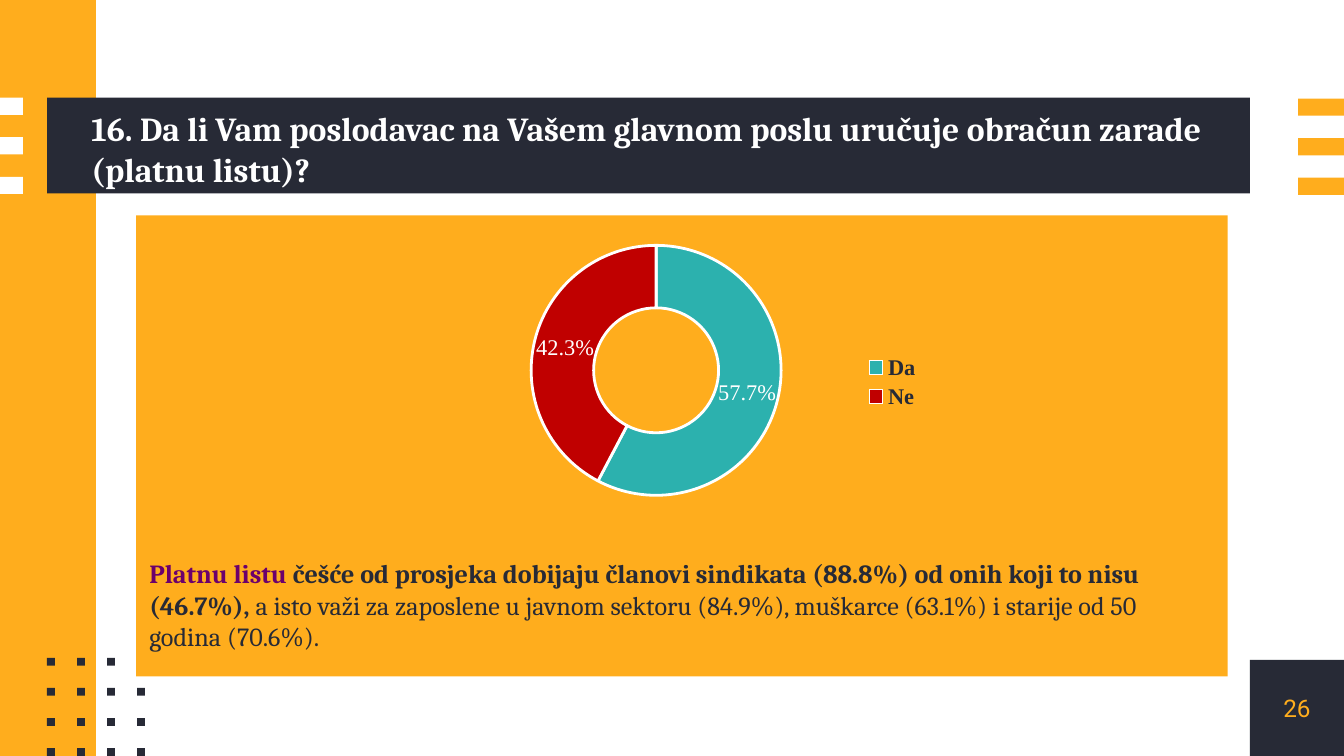
from itertools import product
from lxml import etree
from pptx import Presentation
from pptx.chart.data import CategoryChartData as Data
from pptx.dml.color import RGBColor as Rgb
from pptx.enum.chart import XL_CHART_TYPE as Kind, XL_LEGEND_POSITION as Side
from pptx.enum.shapes import MSO_SHAPE as Shape
from pptx.enum.text import MSO_ANCHOR as Anchor, PP_ALIGN as Align
from pptx.oxml.ns import qn
from pptx.util import Pt

GOLD, DARK, WHITE, PLUM = "FFAD1D", "272A36", "FFFFFF", "6C006C"
TITLE = "16. Da li Vam poslodavac na Vašem glavnom poslu uručuje obračun zarade (platnu listu)?"
PAGE = "26"
NOTE = [
    ("Platnu listu ", PLUM, True),
    ("češće od prosjeka dobijaju članovi sindikata (88.8%) od onih koji to nisu (46.7%),", DARK, True),
    (" a isto važi za zaposlene u javnom sektoru (84.9%), muškarce (63.1%) "
     "i starije od 50 godina (70.6%).", DARK, False),
]
ANSWERS = [("Da", 0.577, "2CB1AE"), ("Ne", 0.423, "C00000")]
PLOT = {"x": 0.2, "y": 0.09, "w": 0.5, "h": 0.75}

CORNER = (669.6, 353.5, 50.4, 51.5)
PANEL = (72.9, 115.4, 584.8, 247)
BARS = [
    (CORNER, DARK),
    ((0, 0, 51.4, 405), GOLD),
    ((25.2, 52.3, 644.4, 51.4), DARK),
]
STRIPES = [(0, 52.3, 12.3, WHITE), (695.4, 52.8, 24.6, GOLD)]


def color(code):
    return Rgb.from_string(code)


def box(area, fill):
    item = slide.shapes.add_shape(Shape.RECTANGLE, *map(Pt, area))
    item.shadow.inherit = False
    item.fill.solid()
    item.fill.fore_color.rgb = color(fill)
    item.line.fill.background()


def style(font, size, code, face, bold=False):
    font.size, font.name, font.bold = Pt(size), face, bold
    font.color.rgb = color(code)


def text(area, runs, size, face="Cambria", align=Align.LEFT, anchor=Anchor.MIDDLE, inset=0):
    frame = slide.shapes.add_textbox(*map(Pt, area)).text_frame
    frame.word_wrap = True
    frame.vertical_anchor = anchor
    if inset == 0:
        frame.margin_left = frame.margin_right = frame.margin_top = frame.margin_bottom = 0
    else:
        frame.margin_left = frame.margin_right = Pt(inset)
        frame.margin_top = frame.margin_bottom = Pt(inset / 2)
    line = frame.paragraphs[0]
    line.alignment = align
    for words, code, bold in runs:
        run = line.add_run()
        run.text = words
        style(run.font, size, code, face, bold)


def place(chart):
    area = chart._chartSpace.chart.plotArea
    for old in area.findall(qn("c:layout")):
        area.remove(old)
    layout = etree.Element(qn("c:layout"))
    area.insert(0, layout)
    manual = etree.SubElement(layout, qn("c:manualLayout"))
    modes = {"layoutTarget": "inner", "xMode": "edge", "yMode": "edge"}
    for tag, value in {**modes, **PLOT}.items():
        etree.SubElement(manual, qn("c:" + tag)).set("val", str(value))


def ring(area):
    data = Data(number_format="0.0%")
    data.categories = [name for name, _, _ in ANSWERS]
    data.add_series("Series 1", [value for _, value, _ in ANSWERS])
    chart = slide.shapes.add_chart(Kind.DOUGHNUT, *map(Pt, area), data).chart
    face = "Times New Roman"
    style(chart.font, 12, DARK, face)
    chart.has_title = False
    chart.has_legend = True
    chart.legend.position = Side.RIGHT
    chart.legend.include_in_layout = False
    style(chart.legend.font, 12, DARK, face, True)
    plot = chart.plots[0]
    plot.vary_by_categories = True
    plot.has_data_labels = True
    labels = plot.data_labels
    labels.show_value, labels.show_percentage = True, False
    labels.number_format, labels.number_format_is_linked = "0.0%", False
    style(labels.font, 12, WHITE, face)
    for i, (_, _, fill) in enumerate(ANSWERS):
        look = plot.series[0].points[i].format
        look.fill.solid()
        look.fill.fore_color.rgb = color(fill)
        look.line.color.rgb = color(WHITE)
        look.line.width = Pt(1.5)
    place(chart)


deck = Presentation()
deck.slide_width, deck.slide_height = Pt(720), Pt(405)
slide = deck.slides.add_slide(deck.slide_layouts[6])

for area, fill in BARS:
    box(area, fill)
for (left, top, wide, fill), row in product(STRIPES, range(3)):
    box((left, top + 21.2 * row, wide, 9.2), fill)
for row, col in product(range(4), repeat=2):
    box((25.2 + 16.1 * col, 352.5 + 16.1 * row, 4.2, 4.2), DARK)

text((49, 54, 617.8, 51.1), [(TITLE, WHITE, True)], 18)
text(CORNER, [(PAGE, GOLD, False)], 13, "Roboto", Align.CENTER)
box(PANEL, GOLD)
ring((229.7, 115.4, 270.7, 178.6))
text((72.9, 295.2, 584.8, 58.3), NOTE, 14, anchor=Anchor.TOP, inset=7.2)

deck.save("out.pptx")
